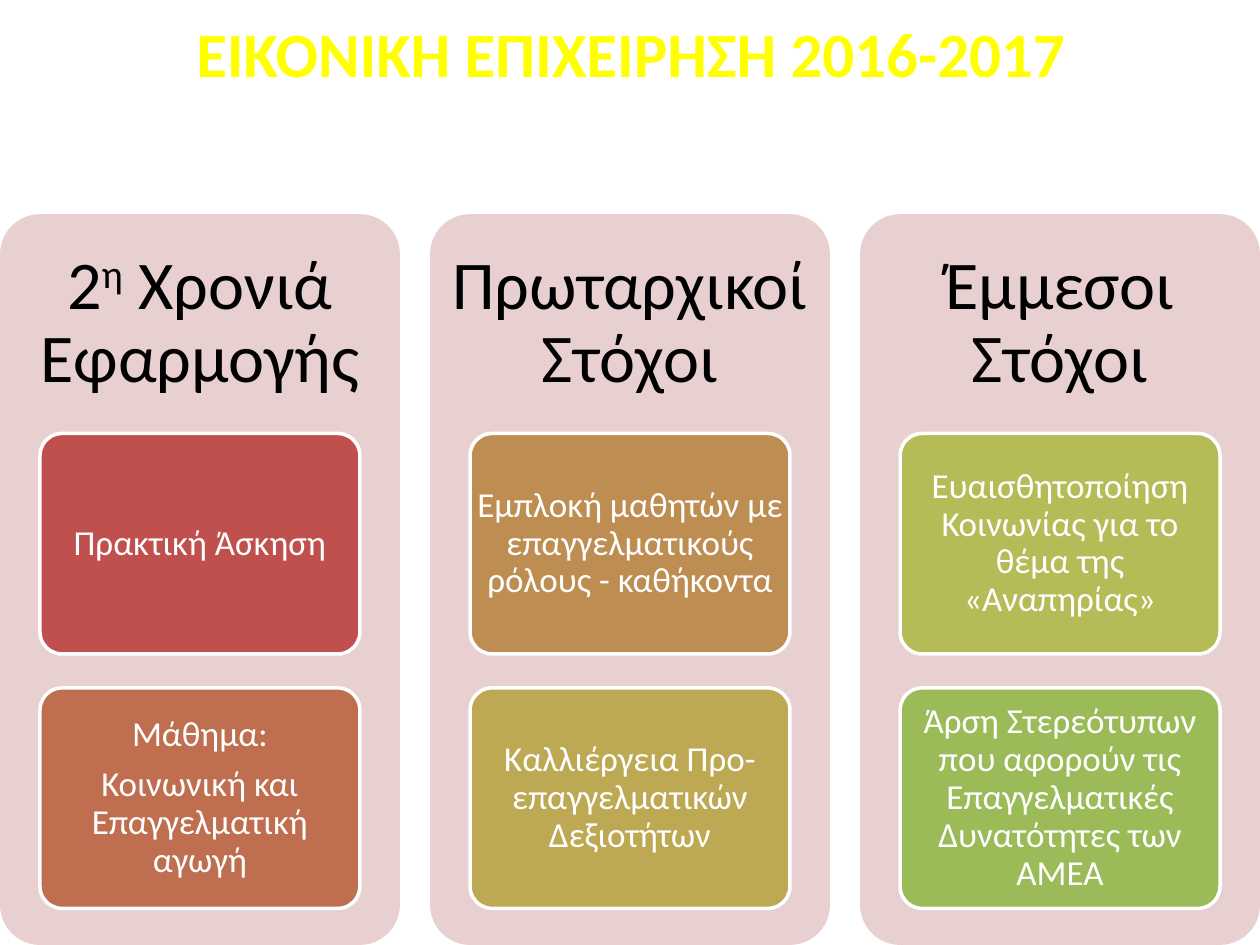
from dataclasses import dataclass

from pptx import Presentation
from pptx.dml.color import RGBColor
from pptx.enum.shapes import MSO_SHAPE
from pptx.enum.text import MSO_ANCHOR, PP_ALIGN
from pptx.util import Pt

TITLE = "ΕΙΚΟΝΙΚΗ ΕΠΙΧΕΙΡΗΣΗ 2016-2017"
COLUMNS = [
    {
        "heading": [("2", False), ("η", True), (" Χρονιά Εφαρμογής", False)],
        "cards": [
            ("C0504D", ["Πρακτική Άσκηση"]),
            ("BF6F4F", ["Μάθημα:", "Κοινωνική και Επαγγελματική αγωγή"]),
        ],
    },
    {
        "heading": [("Πρωταρχικοί Στόχοι", False)],
        "cards": [
            ("BE8D52", ["Εμπλοκή μαθητών με επαγγελματικούς ρόλους - καθήκοντα"]),
            ("BDA954", ["Καλλιέργεια Προ-επαγγελματικών Δεξιοτήτων"]),
        ],
    },
    {
        "heading": [("Έμμεσοι Στόχοι", False)],
        "cards": [
            ("B5BC57", ["Ευαισθητοποίηση Κοινωνίας για το θέμα της «Αναπηρίας»"]),
            ("9BBB59", ["Άρση Στερεότυπων που αφορούν τις Επαγγελματικές "
                        "Δυνατότητες των ΑΜΕΑ"]),
        ],
    },
]


@dataclass(frozen=True)
class Theme:
    font: str = "Calibri"
    title: str = "FFFF00"
    heading: str = "000000"
    card_text: str = "FFFFFF"
    card_line: str = "FFFFFF"
    panel: str = "E8D0D0"
    title_size: float = 36
    heading_size: float = 39
    card_size: float = 20


THEME = Theme()
SLIDE_WIDTH, SLIDE_HEIGHT = 720, 540
PANEL_TOP, PANEL_WIDTH = 122.4, 228.5
PANEL_HEIGHT = SLIDE_HEIGHT - PANEL_TOP
PANEL_PITCH = (SLIDE_WIDTH - PANEL_WIDTH) / (len(COLUMNS) - 1)
HEADING_HEIGHT = 0.3 * PANEL_HEIGHT
CARD_INSET, CARD_WIDTH = 0.1 * PANEL_WIDTH, 0.8 * PANEL_WIDTH
CARD_HEIGHT, CARD_PITCH = 126, 145.4


def add_rounded(slide, bounds, fill, line=None):
    shape = slide.shapes.add_shape(MSO_SHAPE.ROUNDED_RECTANGLE, *map(Pt, bounds))
    shape.adjustments[0] = 0.1
    shape.shadow.inherit = False
    shape.fill.solid()
    shape.fill.fore_color.rgb = RGBColor.from_string(fill)
    if line:
        shape.line.color.rgb = RGBColor.from_string(line)
        shape.line.width = Pt(2)
    else:
        shape.line.fill.background()
    return shape


def write(box, paragraphs, size, color, margin=0, bold=False, spacing=0.9):
    frame = box.text_frame
    frame.word_wrap = True
    frame.vertical_anchor = MSO_ANCHOR.MIDDLE
    frame.margin_left = frame.margin_right = Pt(margin)
    frame.margin_top = frame.margin_bottom = Pt(margin)
    for index, spans in enumerate(paragraphs):
        para = frame.add_paragraph() if index else frame.paragraphs[0]
        para.alignment = PP_ALIGN.CENTER
        para.line_spacing = spacing
        if index:
            para.space_before = Pt(0.35 * size)
        para.font.name = THEME.font
        para.font.size = Pt(size)
        para.font.bold = bold
        para.font.color.rgb = RGBColor.from_string(color)
        for text, raised in spans:
            span = para.add_run()
            span.text = text
            if raised:
                span._r.get_or_add_rPr().set("baseline", "30000")


def add_column(slide, left, column):
    add_rounded(slide, (left, PANEL_TOP, PANEL_WIDTH, PANEL_HEIGHT), THEME.panel)
    heading = slide.shapes.add_textbox(
        Pt(left), Pt(PANEL_TOP), Pt(PANEL_WIDTH), Pt(HEADING_HEIGHT))
    write(heading, [column["heading"]], THEME.heading_size, THEME.heading, margin=11.5)
    for row, (fill, lines) in enumerate(column["cards"]):
        top = PANEL_TOP + HEADING_HEIGHT + row * CARD_PITCH
        card = add_rounded(slide, (left + CARD_INSET, top, CARD_WIDTH, CARD_HEIGHT),
                           fill, THEME.card_line)
        write(card, [[(line, False)] for line in lines],
              THEME.card_size, THEME.card_text)


def main():
    deck = Presentation()
    deck.slide_width, deck.slide_height = Pt(SLIDE_WIDTH), Pt(SLIDE_HEIGHT)
    slide = deck.slides.add_slide(deck.slide_layouts[6])
    title = slide.shapes.add_textbox(Pt(36.7), Pt(0), Pt(648), Pt(60))
    write(title, [[(TITLE, False)]], THEME.title_size, THEME.title,
          margin=3.6, bold=True, spacing=1.0)
    for index, column in enumerate(COLUMNS):
        add_column(slide, index * PANEL_PITCH, column)
    deck.save("out.pptx")


if __name__ == "__main__":
    main()
